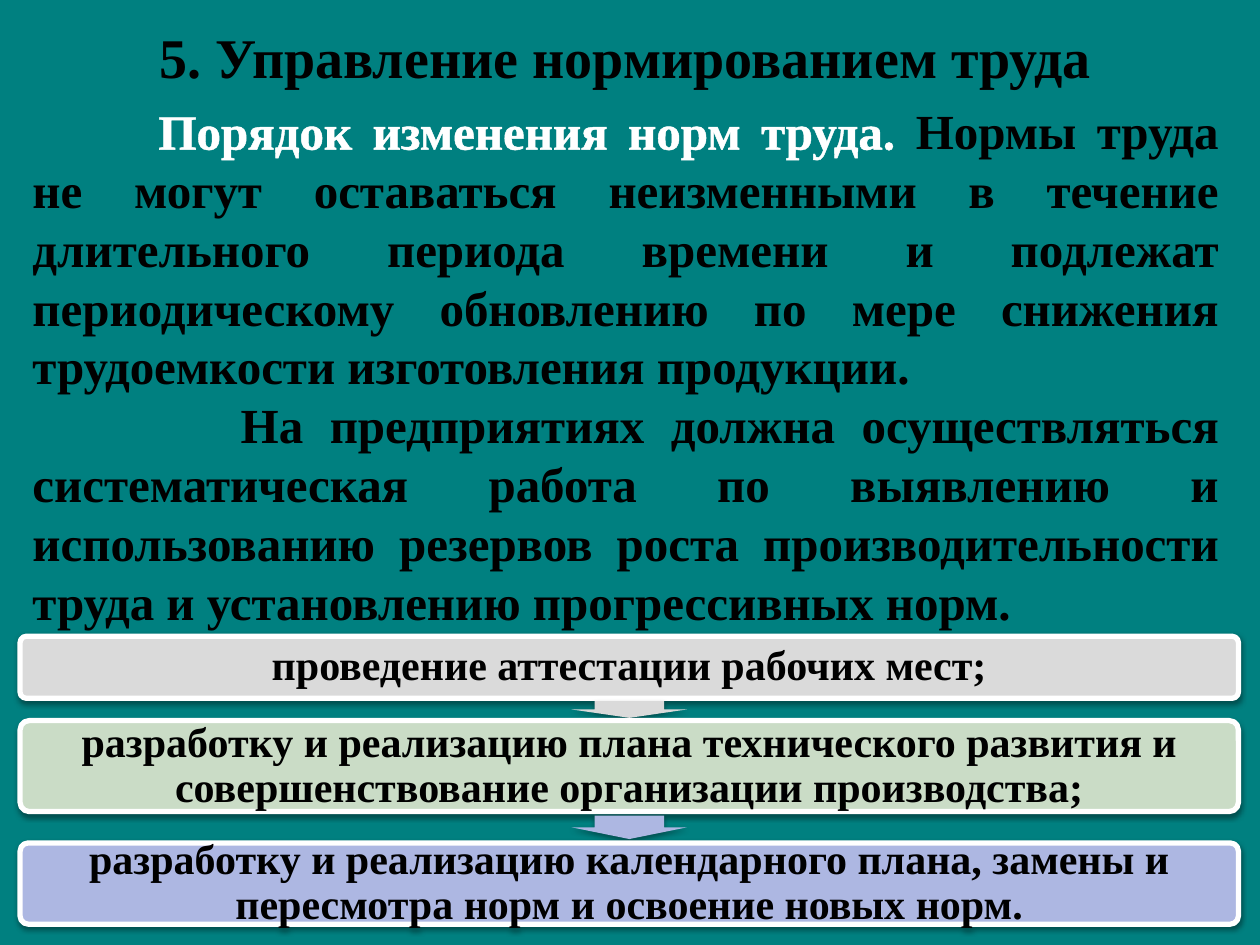
from lxml.etree import SubElement
from pptx import Presentation
from pptx.dml.color import RGBColor
from pptx.enum.shapes import MSO_SHAPE as SHAPE
from pptx.enum.text import MSO_ANCHOR as ANCHOR, PP_ALIGN as ALIGN
from pptx.oxml.ns import qn
from pptx.util import Pt

FONT = "Times New Roman"
TEAL = RGBColor(0x00, 0x80, 0x80)
BLACK = RGBColor(0x00, 0x00, 0x00)
WHITE = RGBColor(0xFF, 0xFF, 0xFF)
GREY = RGBColor(0xDA, 0xDA, 0xDA)
GREEN = RGBColor(0xCA, 0xDC, 0xC6)
BLUE = RGBColor(0xAD, 0xB7, 0xE2)

CARD_LEFT, CARD_WIDTH = 11.5, 696.2
ARROW_WIDTH = 66.2

TITLE = "5. Управление нормированием труда"
LEAD = "Порядок изменения норм труда."
BODY = (" Нормы труда не могут оставаться неизменными в течение длительного "
        "периода времени и подлежат периодическому обновлению по мере снижения "
        "трудоемкости изготовления продукции.")
BODY_2 = ("На предприятиях должна осуществляться систематическая работа по "
          "выявлению и использованию резервов роста производительности труда "
          "и установлению прогрессивных норм.")
STEPS = [
    ("проведение аттестации рабочих мест;", GREY, 363.6, 35.4),
    ("разработку и реализацию плана технического развития и "
     "совершенствование организации производства;", GREEN, 411.8, 52),
    ("разработку и реализацию календарного плана, замены и "
     "пересмотра норм и освоение новых норм.", BLUE, 481.7, 46.4),
]


def add_text(p, text, size=28, color=BLACK, align=None, indent=None,
             spacing=None, outline=None):
    if indent is not None:
        pPr = p._p.get_or_add_pPr()
        pPr.set("marL", "0")
        pPr.set("indent", str(Pt(indent)))
    if align is not None:
        p.alignment = align
    if spacing is not None:
        p.line_spacing = spacing
    r = p.add_run()
    r.text = text
    r.font.name, r.font.size, r.font.bold = FONT, Pt(size), True
    r.font.color.rgb = color
    if outline is not None:
        rPr = r._r.get_or_add_rPr()
        ln = SubElement(rPr, qn("a:ln"), w=str(Pt(outline)))
        rPr.insert(0, ln)
        fill = SubElement(ln, qn("a:solidFill"))
        SubElement(fill, qn("a:srgbClr"), val=str(color))


def add_shadow(s):
    s.shadow.inherit = False
    effects = s._element.spPr.find(qn("a:effectLst"))
    shadow = SubElement(effects, qn("a:outerShdw"), blurRad=str(Pt(3.1)),
                        dist=str(Pt(1.6)), dir="5400000", rotWithShape="0")
    color = SubElement(shadow, qn("a:srgbClr"), val=str(BLACK))
    SubElement(color, qn("a:alpha"), val="38000")


def add_title(slide):
    s = slide.shapes.title
    s.left, s.top, s.width, s.height = Pt(8.6), Pt(9.4), Pt(697.7), Pt(46)
    tf = s.text_frame
    tf.word_wrap = True
    tf.vertical_anchor = ANCHOR.TOP
    add_text(tf.paragraphs[0], TITLE, size=32, align=ALIGN.CENTER)


def add_body(slide):
    tf = slide.shapes.add_textbox(Pt(11.5), Pt(54), Pt(692), Pt(312.5)).text_frame
    tf.word_wrap = True
    p = tf.paragraphs[0]
    add_text(p, LEAD, color=WHITE, align=ALIGN.JUSTIFY, indent=72, outline=1.45)
    add_text(p, BODY)
    add_text(tf.add_paragraph(), BODY_2, align=ALIGN.JUSTIFY, indent=119)


def add_card(slide, text, color, top, height):
    s = slide.shapes.add_shape(SHAPE.ROUNDED_RECTANGLE, Pt(CARD_LEFT), Pt(top),
                               Pt(CARD_WIDTH), Pt(height))
    s.adjustments[0] = 0.1
    s.fill.solid()
    s.fill.fore_color.rgb = color
    s.line.color.rgb = WHITE
    s.line.width = Pt(3)
    add_shadow(s)
    tf = s.text_frame
    tf.word_wrap = True
    tf.vertical_anchor = ANCHOR.MIDDLE
    tf.margin_left = tf.margin_right = Pt(8)
    tf.margin_top = tf.margin_bottom = Pt(7.2)
    add_text(tf.paragraphs[0], text, size=24, align=ALIGN.CENTER, spacing=0.9)


def add_arrow(slide, color, top, bottom):
    length = bottom - top
    left = CARD_LEFT + (CARD_WIDTH - length) / 2
    s = slide.shapes.add_shape(SHAPE.RIGHT_ARROW, Pt(left),
                               Pt((top + bottom - ARROW_WIDTH) / 2),
                               Pt(length), Pt(ARROW_WIDTH))
    s.rotation = 90
    s.adjustments[0], s.adjustments[1] = 0.6, 0.5
    s.fill.solid()
    s.fill.fore_color.rgb = color
    s.line.fill.background()
    add_shadow(s)


def main():
    prs = Presentation()
    prs.slide_width, prs.slide_height = Pt(720), Pt(540)
    slide = prs.slides.add_slide(prs.slide_layouts[5])
    slide.background.fill.solid()
    slide.background.fill.fore_color.rgb = TEAL
    add_title(slide)
    add_body(slide)
    arrow_colors = [GREY, BLUE]
    for i, (text, color, top, height) in enumerate(STEPS):
        add_card(slide, text, color, top, height)
        if i < len(arrow_colors):
            gap_top, gap_bottom = top + height, STEPS[i + 1][2]
            inset = (gap_bottom - gap_top) / 8
            add_arrow(slide, arrow_colors[i], gap_top + inset, gap_bottom - inset)
    prs.save("out.pptx")


if __name__ == "__main__":
    main()
